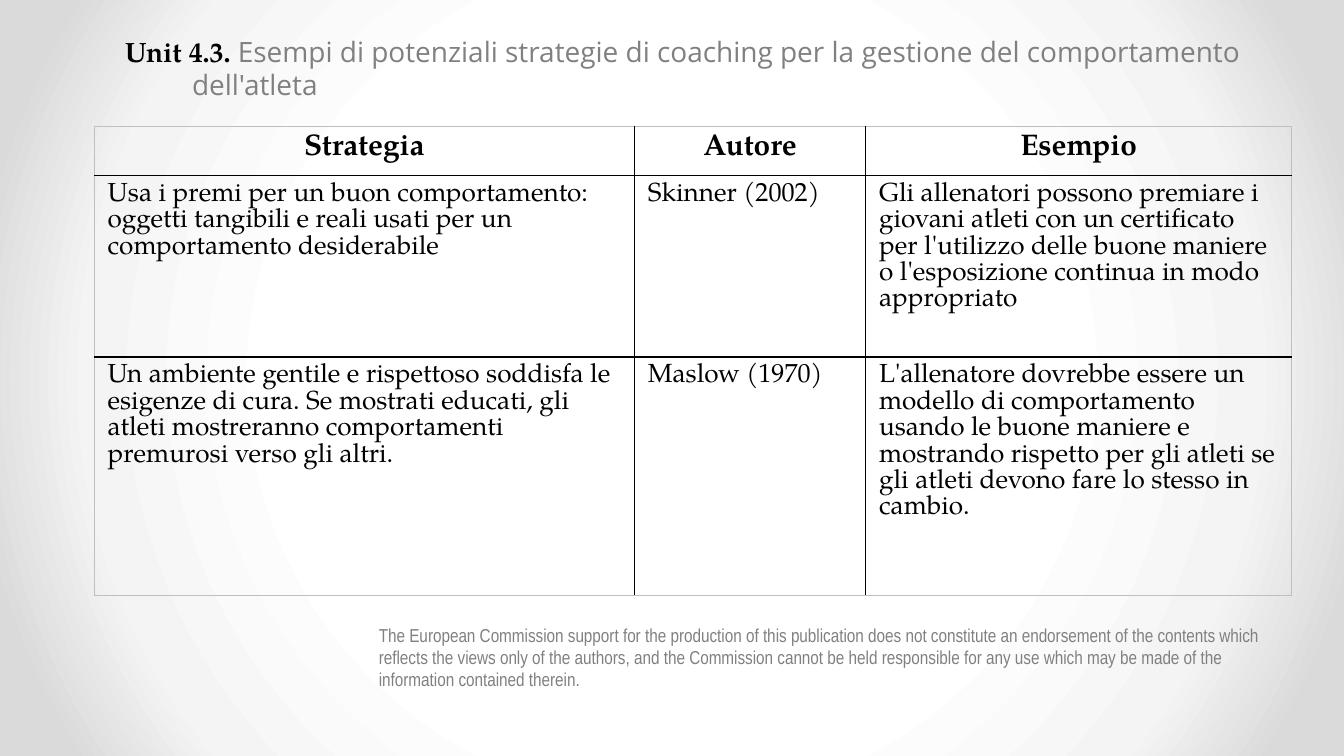
"""Build a slide with a table of coaching strategies."""
from pptx import Presentation
from pptx.dml.color import RGBColor
from pptx.enum.text import PP_ALIGN
from pptx.oxml import parse_xml
from pptx.util import Cm, Pt

BLACK = RGBColor(0, 0, 0)
GREY = RGBColor(0x80, 0x80, 0x80)
PALE = RGBColor(0xBF, 0xBF, 0xBF)
SERIF, SANS, NARROW = "TeX Gyre Pagella", "Open Sans", "Arial Narrow"
SPACE = ('xmlns:a="http://schemas.openxmlformats.org/drawingml/2006/main" '
         'xmlns:p="http://schemas.openxmlformats.org/presentationml/2006/main"')
STOPS = [(50, "FFFFFF"), (76, "F4F4F4"), (92, "DADADA")]
COLS = [10.21, 4.37, 8.05]
ROWS = [0.93, 3.43, 4.5]
CELLS = [
    ["Strategia", "Autore", "Esempio"],
    ["Usa i premi per un buon comportamento: oggetti tangibili e reali usati "
     "per un comportamento desiderabile",
     "Skinner (2002)",
     "Gli allenatori possono premiare i giovani atleti con un certificato per "
     "l'utilizzo delle buone maniere o l'esposizione continua in modo appropriato"],
    ["Un ambiente gentile e rispettoso soddisfa le esigenze di cura. Se mostrati "
     "educati, gli atleti mostreranno comportamenti premurosi verso gli altri.",
     "Maslow (1970)",
     "L'allenatore dovrebbe essere un modello di comportamento usando le buone "
     "maniere e mostrando rispetto per gli atleti se gli atleti devono fare lo "
     "stesso in cambio."],
]
NOTICE = ("The European Commission support for the production of this publication "
          "does not constitute an endorsement of the contents which reflects the "
          "views only of the authors, and the Commission cannot be held responsible "
          "for any use which may be made of the information contained therein.")


def write(para, text, font=SERIF, size=14, color=BLACK, bold=False, align=None, line=None):
    run = para.add_run()
    run.text = text
    run.font.name = font
    run.font.size = Pt(size)
    run.font.color.rgb = color
    run.font.bold = bold
    if align is not None:
        para.alignment = align
    if line:
        para.line_spacing = Pt(line)


class Page:
    def __init__(self, deck):
        self.slide = deck.slides.add_slide(deck.slide_layouts[6])

    def back(self, stops):
        marks = "".join(f'<a:gs pos="{pos * 1000}"><a:srgbClr val="{tint}"/></a:gs>'
                        for pos, tint in stops)
        fill = (f'<p:bg {SPACE}><p:bgPr><a:gradFill rotWithShape="1"><a:gsLst>{marks}'
                '</a:gsLst><a:path path="circle"><a:fillToRect l="50000" t="50000" '
                'r="50000" b="50000"/></a:path></a:gradFill><a:effectLst/>'
                '</p:bgPr></p:bg>')
        self.slide.element.cSld.insert(0, parse_xml(fill))

    def label(self, left, top, width, height):
        box = self.slide.shapes.add_textbox(Cm(left), Cm(top), Cm(width), Cm(height))
        box.text_frame.word_wrap = True
        return box.text_frame.paragraphs[0]

    def edge(self, cell, side, color, width):
        cell._tc.get_or_add_tcPr().append(parse_xml(
            f'<a:ln{side} {SPACE} w="{Pt(width)}"><a:solidFill><a:srgbClr val="{color}"/>'
            f'</a:solidFill></a:ln{side}>'))

    def table(self, left, top, cols, rows, cells):
        grid = self.slide.shapes.add_table(len(rows), len(cols), Cm(left), Cm(top),
                                           Cm(sum(cols)), Cm(sum(rows))).table
        grid.horz_banding = False
        grid.first_row = False
        for col, width in zip(grid.columns, cols):
            col.width = Cm(width)
        for row, height in zip(grid.rows, rows):
            row.height = Cm(height)
        for r, texts in enumerate(cells):
            for c, text in enumerate(texts):
                cell = grid.cell(r, c)
                outer = {"L": c == 0, "R": c == len(cols) - 1,
                         "T": r == 0, "B": r == len(rows) - 1}
                for side, rim in outer.items():
                    self.edge(cell, side, PALE if rim else BLACK, 0.5 if rim else 1)
                cell.fill.background()
                para = cell.text_frame.paragraphs[0]
                if r == 0:
                    write(para, text, size=16, bold=True, align=PP_ALIGN.CENTER, line=16.2)
                else:
                    write(para, text, line=14.15)


def main():
    deck = Presentation()
    deck.slide_width, deck.slide_height = Cm(25.4), Cm(14.29)
    page = Page(deck)
    page.back(STOPS)
    write(page.label(6.91, 11.66, 17.6, 1.7), NOTICE, font=NARROW, size=10, color=GREY)
    page.table(1.78, 2.39, COLS, ROWS, CELLS)
    title = page.label(2.11, 0.53, 22.81, 1.55)
    props = title._p.get_or_add_pPr()
    props.set("marL", str(Cm(1.27)))
    props.set("indent", str(-Cm(1.27)))
    write(title, "Unit 4.3. ", size=15, bold=True, line=17.7)
    write(title, "Esempi di potenziali strategie di coaching per la gestione del "
          "comportamento dell'atleta", font=SANS, size=15, color=GREY)
    deck.save("out.pptx")


if __name__ == "__main__":
    main()
